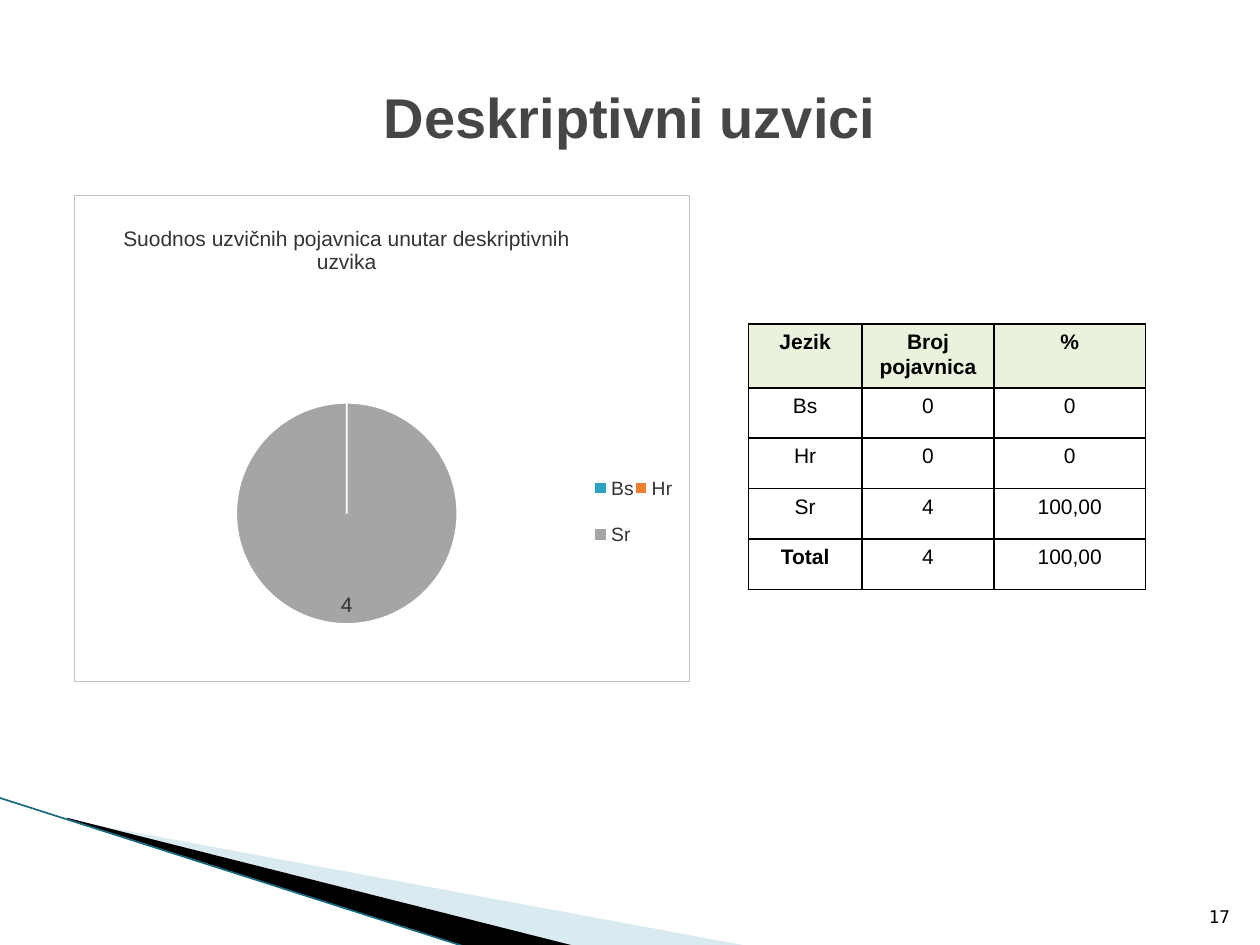
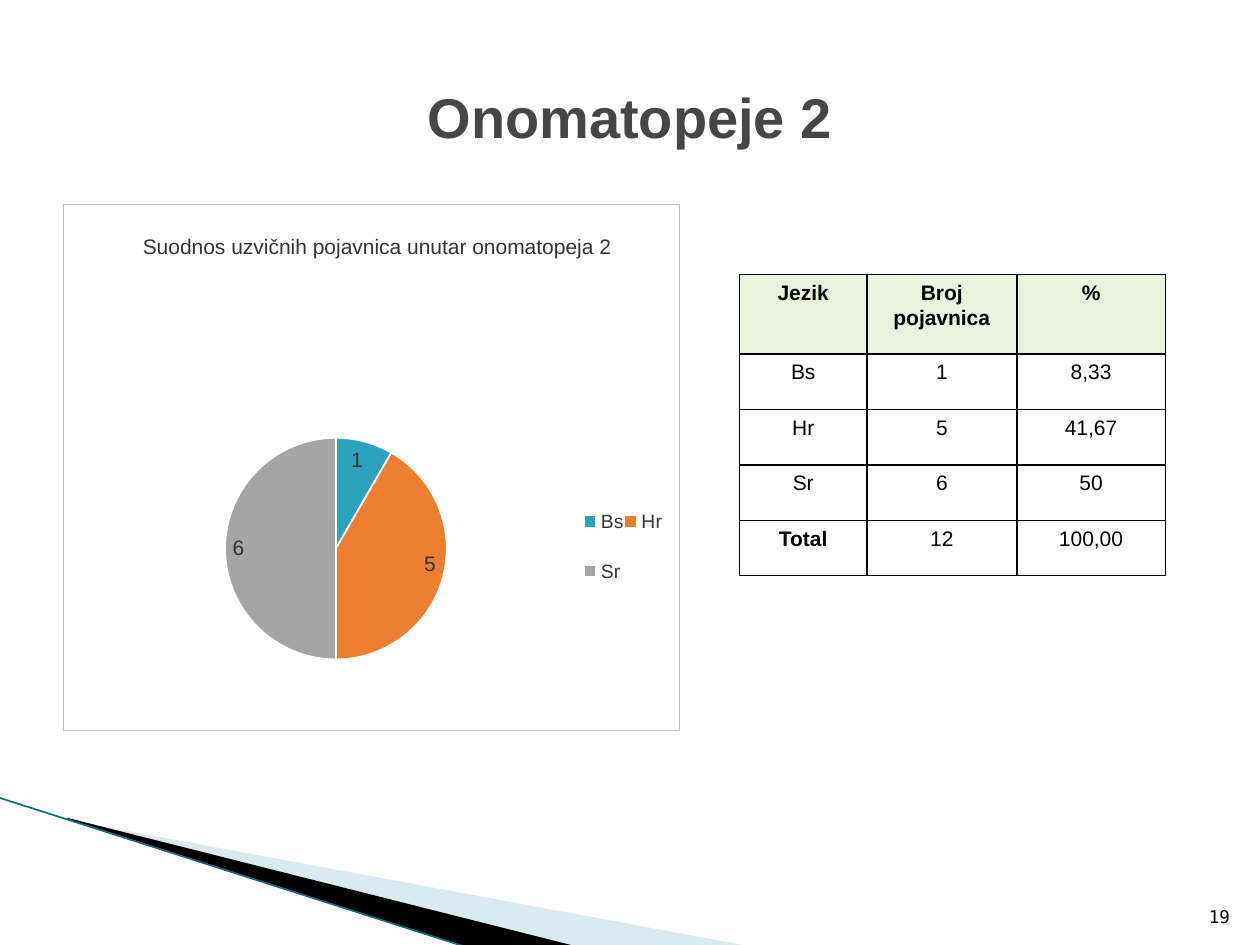
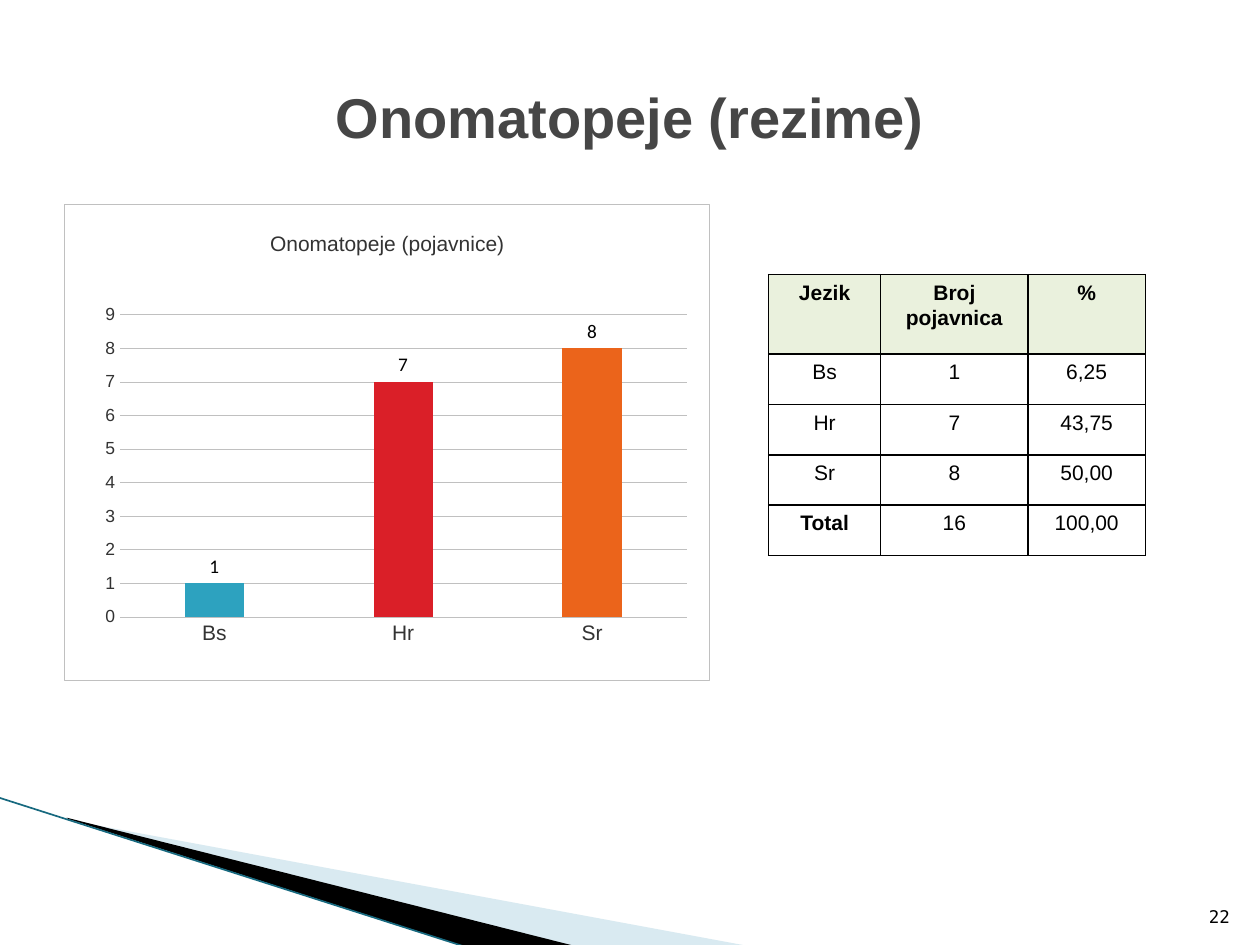
"""Build three slides comparing interjection counts by language."""
from lxml import etree
from pptx import Presentation
from pptx.chart.data import CategoryChartData
from pptx.dml.color import RGBColor
from pptx.enum.chart import XL_CHART_TYPE, XL_LABEL_POSITION, XL_LEGEND_POSITION, XL_TICK_MARK
from pptx.enum.shapes import MSO_CONNECTOR
from pptx.enum.text import MSO_ANCHOR, PP_ALIGN
from pptx.oxml import parse_xml
from pptx.oxml.ns import nsdecls, qn
from pptx.util import Inches, Pt

PIE, COLUMN = XL_CHART_TYPE.PIE, XL_CHART_TYPE.COLUMN_CLUSTERED
INSIDE_END, OUTSIDE_END = XL_LABEL_POSITION.INSIDE_END, XL_LABEL_POSITION.OUTSIDE_END
LEGEND_RIGHT = XL_LEGEND_POSITION.RIGHT
NO_TICK = XL_TICK_MARK.NONE
STRAIGHT = MSO_CONNECTOR.STRAIGHT
MIDDLE, BOTTOM = MSO_ANCHOR.MIDDLE, MSO_ANCHOR.BOTTOM
CENTER, RIGHT = PP_ALIGN.CENTER, PP_ALIGN.RIGHT

COLORS = {
    "title": "464646", "text": "000000", "label": "333333", "white": "FFFFFF",
    "frame": "C0C0C0", "header": "EAF1DD", "sweep": "A0CBDC", "edge": "17697F",
    "teal": "2DA2BF", "orange": "ED7D31", "gray": "A5A5A5",
    "red": "DA1F28", "amber": "EB641B",
}
LANGUAGES = ["Bs", "Hr", "Sr"]
HEADERS = ["Jezik", "Broj pojavnica", "%"]
PIE_COLORS = ["teal", "orange", "gray"]
COLUMN_COLORS = ["teal", "red", "amber"]
PIE_PLOT = (0.263, 0.405, 0.36, 0.499)
COLUMN_PLOT = (0.086, 0.232, 0.879, 0.635)
LEGEND_AREA = (0.845, 0.53, 0.13, 0.24)

SLIDES = [
    {
        "title": "Deskriptivni uzvici", "number": "17", "kind": PIE,
        "caption": "Suodnos uzvičnih pojavnica unutar deskriptivnih uzvika",
        "caption_at": (0.073, 0.055), "chart_at": (0.59, 1.55, 4.88, 3.86),
        "counts": [0, 0, 4], "shares": ["0", "0", "100,00", "100,00"],
        "table_at": (5.94, 2.57), "columns": [0.9, 1.05, 1.2],
        "header_height": 0.47, "row_height": 0.4,
    },
    {
        "title": "Onomatopeje 2", "number": "19", "kind": PIE,
        "caption": "Suodnos uzvičnih pojavnica unutar onomatopeja 2",
        "caption_at": (0.123, 0.048), "chart_at": (0.5, 1.62, 4.89, 4.18),
        "counts": [1, 5, 6], "shares": ["8,33", "41,67", "50", "100,00"],
        "table_at": (5.87, 2.18), "columns": [1.01, 1.19, 1.18],
        "header_height": 0.63, "row_height": 0.44,
    },
    {
        "title": "Onomatopeje (rezime)", "number": "22", "kind": COLUMN,
        "caption": "Onomatopeje (pojavnice)",
        "caption_at": (0.313, 0.048), "chart_at": (0.51, 1.62, 5.12, 3.78),
        "counts": [1, 7, 8], "shares": ["6,25", "43,75", "50,00", "100,00"],
        "table_at": (6.1, 2.18), "columns": [0.89, 1.17, 0.93],
        "header_height": 0.63, "row_height": 0.4,
    },
]


def rgb(name):
    """Return the named colour."""
    return RGBColor.from_string(COLORS[name])


def apply(target, values):
    """Set each attribute of the target from a dict."""
    for attribute, value in values.items():
        setattr(target, attribute, value)


def style_font(font, size, color="text", bold=False, name="Arial"):
    """Set the typeface, size, weight and colour of a font."""
    apply(font, {"name": name, "size": Pt(size), "bold": bold})
    font.color.rgb = rgb(color)


def paint(fill, color):
    """Give a fill one solid colour."""
    fill.solid()
    fill.fore_color.rgb = rgb(color)


def style_line(line, color, width):
    """Set the colour and width of a line."""
    line.color.rgb = rgb(color)
    line.width = Pt(width)


def add_text(slide, text, area, anchor, align, **font):
    """Add a wrapped one-paragraph text box."""
    frame = slide.shapes.add_textbox(*map(Inches, area)).text_frame
    apply(frame, {"word_wrap": True, "vertical_anchor": anchor})
    paragraph = frame.paragraphs[0]
    apply(paragraph, {"text": text, "alignment": align})
    style_font(paragraph.font, **font)


def add_blade(slide, points, color, opacity=100):
    """Add a filled outline through the given points."""
    start, *others = [tuple(map(Inches, point)) for point in points]
    builder = slide.shapes.build_freeform(*start, scale=1.0)
    builder.add_line_segments(others, close=True)
    blade = builder.convert_to_shape()
    blade.shadow.inherit = False
    paint(blade.fill, color)
    blade.line.fill.background()
    if opacity < 100:
        tint = blade.fill._xPr.find(f".//{qn('a:srgbClr')}")
        etree.SubElement(tint, qn("a:alpha"), val=str(opacity * 1000))


def add_sweep(slide):
    """Add the pointed band in the lower left corner."""
    add_blade(slide, [(0.55, 6.51), (5.95, 7.51), (4.56, 7.51), (0.55, 6.5)], "sweep", 40)
    add_blade(slide, [(0.53, 6.49), (4.57, 7.51), (3.72, 7.52), (0.54, 6.5)], "text")
    ends = map(Inches, (-0.01, 6.33, 3.71, 7.52))
    edge = slide.shapes.add_connector(STRAIGHT, *ends)
    style_line(edge.line, "edge", 0.95)
    etree.SubElement(edge._element.spPr, qn("a:effectLst"))


def place(element, index, area, inner=False):
    """Give a chart part a manual layout in fractions of the chart."""
    for old in element.findall(qn("c:layout")):
        element.remove(old)
    layout = parse_xml(f"<c:layout {nsdecls('c')}><c:manualLayout/></c:layout>")
    settings = {"layoutTarget": "inner"} if inner else {}
    settings.update(xMode="edge", yMode="edge")
    settings.update(zip("xywh", area))
    for tag, value in settings.items():
        etree.SubElement(layout[0], qn(f"c:{tag}"), val=str(value))
    element.insert(index, layout)


def frame_chart(chart):
    """Give the chart area a white fill and a thin gray border."""
    area = parse_xml(
        f'<c:spPr {nsdecls("c", "a")}>'
        f'<a:solidFill><a:srgbClr val="{COLORS["white"]}"/></a:solidFill>'
        f'<a:ln w="{Pt(0.25)}"><a:solidFill><a:srgbClr val="{COLORS["frame"]}"/>'
        "</a:solidFill></a:ln></c:spPr>")
    chart.element.find(qn("c:chart")).addnext(area)


def style_pie(chart, plot):
    """Style the labels, slice edges and legend of a pie."""
    labels = plot.data_labels
    apply(labels, {"show_value": True, "position": INSIDE_END,
                   "number_format": "0;;;", "number_format_is_linked": False})
    style_font(labels.font, 12, "label")
    chart.has_legend = True
    apply(chart.legend, {"position": LEGEND_RIGHT, "include_in_layout": False})
    style_font(chart.legend.font, 11, "label")
    place(chart.legend._element, 1, LEGEND_AREA)


def style_columns(chart, plot):
    """Style the labels, spacing and axes of a column chart."""
    chart.has_legend = False
    apply(plot, {"gap_width": 219, "overlap": -27})
    apply(plot.data_labels, {"show_value": True, "position": OUTSIDE_END})
    style_font(plot.data_labels.font, 11, name="Calibri")
    languages, counts = chart.category_axis, chart.value_axis
    for axis, size in ((languages, 12), (counts, 10)):
        apply(axis, {"major_tick_mark": NO_TICK, "minor_tick_mark": NO_TICK})
        style_font(axis.tick_labels.font, size, "label")
    style_line(languages.format.line, "frame", 0.25)
    apply(counts, {"minimum_scale": 0, "maximum_scale": 9, "major_unit": 1,
                   "has_major_gridlines": True})
    counts.format.line.fill.background()
    style_line(counts.major_gridlines.format.line, "frame", 0.25)


def add_count_chart(slide, content):
    """Add the framed chart of counts by language."""
    is_pie = content["kind"] == PIE
    counts = CategoryChartData()
    counts.categories = LANGUAGES
    counts.add_series("Series 1", content["counts"])
    area = map(Inches, content["chart_at"])
    chart = slide.shapes.add_chart(content["kind"], *area, counts).chart
    style_font(chart.font, 11, name="Calibri")
    frame_chart(chart)

    chart.has_title = True
    caption = chart.chart_title.text_frame
    caption.text = content["caption"]
    style_font(caption.paragraphs[0].runs[0].font, 12, "label")
    place(chart.chart_title._element, 1, content["caption_at"])

    plot = chart.plots[0]
    apply(plot, {"vary_by_categories": is_pie, "has_data_labels": True})
    for index, color in enumerate(PIE_COLORS if is_pie else COLUMN_COLORS):
        look = plot.series[0].points[index].format
        paint(look.fill, color)
        if is_pie:
            style_line(look.line, "white", 1)
    (style_pie if is_pie else style_columns)(chart, plot)
    plot_area = chart.element.find(f".//{qn('c:plotArea')}")
    place(plot_area, 0, PIE_PLOT if is_pie else COLUMN_PLOT, inner=True)


def add_borders(cell):
    """Draw a black one-point line on every side of a cell."""
    properties = cell._tc.get_or_add_tcPr()
    for side in "LRTB":
        border = etree.SubElement(properties, qn(f"a:ln{side}"), w=str(Pt(1)))
        solid = etree.SubElement(border, qn("a:solidFill"))
        etree.SubElement(solid, qn("a:srgbClr"), val=COLORS["text"])


def fill_cell(cell, text, is_header, bold):
    """Write and style one table cell."""
    inset = Inches(0.04)
    apply(cell, {"text": text, "margin_left": inset, "margin_right": inset,
                 "margin_top": inset, "margin_bottom": inset})
    paragraph = cell.text_frame.paragraphs[0]
    apply(paragraph, {"alignment": CENTER, "line_spacing": 1.07})
    style_font(paragraph.font, 12, bold=bold)
    add_borders(cell)
    if is_header:
        paint(cell.fill, "header")
    else:
        cell.fill.background()


def add_count_table(slide, content):
    """Add the table of counts and shares with its total."""
    counts = content["counts"] + [sum(content["counts"])]
    rows = [HEADERS, *zip(LANGUAGES + ["Total"], map(str, counts), content["shares"])]
    heights = [content["header_height"]] + [content["row_height"]] * len(counts)
    size = (sum(content["columns"]), sum(heights))
    area = map(Inches, content["table_at"] + size)
    table = slide.shapes.add_table(len(rows), len(HEADERS), *area).table
    table.horz_banding = False
    for column, width in zip(table.columns, content["columns"]):
        column.width = Inches(width)
    for row, height in zip(table.rows, heights):
        row.height = Inches(height)
    for row_index, row in enumerate(rows):
        for column_index, text in enumerate(row):
            is_header = row_index == 0
            fill_cell(table.cell(row_index, column_index), text, is_header,
                      is_header or text == "Total")


def main():
    """Build and save the presentation."""
    deck = Presentation()
    apply(deck, {"slide_width": Inches(10), "slide_height": Inches(7.5)})
    for content in SLIDES:
        slide = deck.slides.add_slide(deck.slide_layouts[6])
        add_sweep(slide)
        add_text(slide, content["title"], (0.5, 0.3, 9, 1.25), MIDDLE, CENTER,
                 size=32, color="title", bold=True)
        add_count_chart(slide, content)
        add_count_table(slide, content)
        add_text(slide, content["number"], (9.46, 7.01, 0.4, 0.4), BOTTOM, RIGHT,
                 size=10, name="DejaVu Sans Mono")
    deck.save("out.pptx")


if __name__ == "__main__":
    main()
